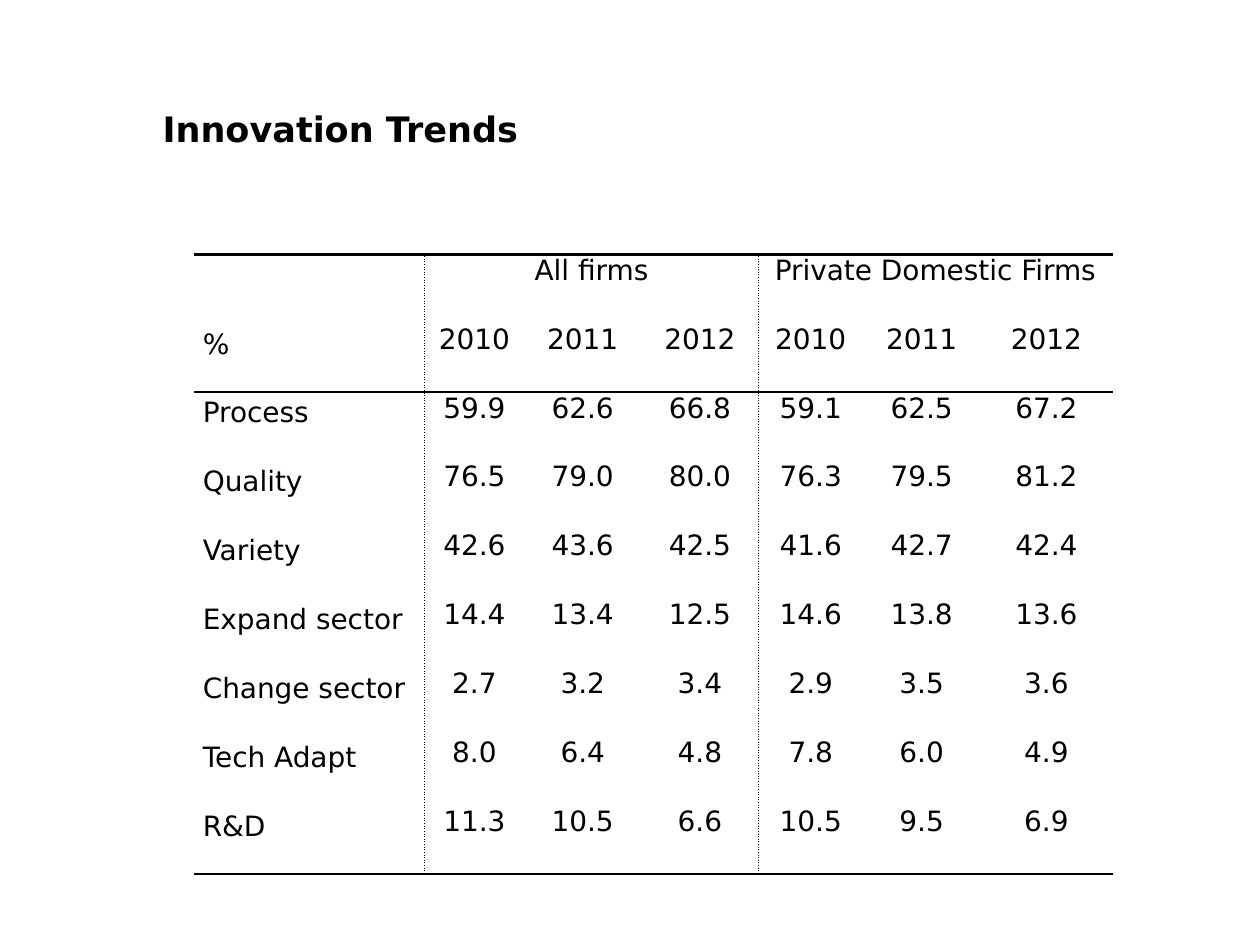
from lxml.etree import SubElement
from pptx import Presentation
from pptx.dml.color import RGBColor
from pptx.enum.text import MSO_ANCHOR, PP_ALIGN
from pptx.oxml.ns import qn
from pptx.util import Inches, Pt

COLORS = {"ink": "000000"}
FONT = "DejaVu Sans"
COLUMN_WIDTHS = [1.83, 0.79, 0.93, 0.93, 0.83, 0.93, 1.05]
GROUP_STARTS = (1, 4)
HEADER_ROW = 1
TREND_ROWS = [
    ["", "All firms", "", "", "Private Domestic Firms", "", ""],
    ["%", "2010", "2011", "2012", "2010", "2011", "2012"],
    ["Process", "59.9", "62.6", "66.8", "59.1", "62.5", "67.2"],
    ["Quality", "76.5", "79.0", "80.0", "76.3", "79.5", "81.2"],
    ["Variety", "42.6", "43.6", "42.5", "41.6", "42.7", "42.4"],
    ["Expand sector", "14.4", "13.4", "12.5", "14.6", "13.8", "13.6"],
    ["Change sector", "2.7", "3.2", "3.4", "2.9", "3.5", "3.6"],
    ["Tech Adapt", "8.0", "6.4", "4.8", "7.8", "6.0", "4.9"],
    ["R&D", "11.3", "10.5", "6.6", "10.5", "9.5", "6.9"],
]
LAST_ROW = len(TREND_ROWS) - 1


def style_font(font, size, bold=False):
    font.name = FONT
    font.size = Pt(size)
    font.bold = bold
    font.color.rgb = RGBColor.from_string(COLORS["ink"])


def add_title(slide, text):
    title = slide.shapes.add_textbox(Inches(1.29), Inches(0.67), Inches(6.29), Inches(0.7))
    frame = title.text_frame
    frame.word_wrap = True
    frame.vertical_anchor = MSO_ANCHOR.MIDDLE
    frame.margin_left = frame.margin_right = frame.margin_top = frame.margin_bottom = 0
    frame.text = text
    style_font(frame.paragraphs[0].runs[0].font, 20, bold=True)


def add_border(cell, side, width, dash="solid"):
    properties = cell._tc.get_or_add_tcPr()
    border = SubElement(properties, qn(f"a:ln{side}"), w=str(Pt(width)))
    if not width:
        SubElement(border, qn("a:noFill"))
        return
    fill = SubElement(border, qn("a:solidFill"))
    SubElement(fill, qn("a:srgbClr"), val=COLORS["ink"])
    SubElement(border, qn("a:prstDash"), val=dash)


def rule_cell(cell, row, column):
    last_column = column + (cell.span_width if cell.is_merge_origin else 1) - 1
    top = {0: 1.5, HEADER_ROW + 1: 1}.get(row, 0)
    bottom = {HEADER_ROW: 1, LAST_ROW: 1.5}.get(row, 0)
    add_border(cell, "L", int(column in GROUP_STARTS), "sysDot")
    add_border(cell, "R", int(last_column + 1 in GROUP_STARTS), "sysDot")
    add_border(cell, "T", top)
    add_border(cell, "B", bottom)
    cell.fill.background()


def write_cell(cell, text, column):
    cell.margin_left = cell.margin_right = Inches(0.07)
    cell.margin_top = cell.margin_bottom = 0
    if not text:
        return
    cell.text_frame.text = text
    paragraph = cell.text_frame.paragraphs[0]
    if column == 0:
        paragraph.line_spacing = 1.15
    else:
        paragraph.alignment = PP_ALIGN.CENTER
    style_font(paragraph.runs[0].font, 16)


def add_trend_table(slide):
    height = Inches(4.92)
    trends = slide.shapes.add_table(
        len(TREND_ROWS), len(COLUMN_WIDTHS),
        Inches(1.54), Inches(2.02), Inches(sum(COLUMN_WIDTHS)), height,
    ).table
    trends.first_row = False
    trends.horz_banding = False
    for column, width in zip(trends.columns, COLUMN_WIDTHS):
        column.width = Inches(width)
    for start in GROUP_STARTS:
        trends.cell(0, start).merge(trends.cell(0, start + 2))
    for row, texts in enumerate(TREND_ROWS):
        for column, text in enumerate(texts):
            cell = trends.cell(row, column)
            write_cell(cell, text, column)
            rule_cell(cell, row, column)


def main():
    presentation = Presentation()
    presentation.slide_width = Inches(10)
    presentation.slide_height = Inches(7.5)
    slide = presentation.slides.add_slide(presentation.slide_layouts[6])
    add_title(slide, "Innovation Trends")
    add_trend_table(slide)
    presentation.save("out.pptx")


if __name__ == "__main__":
    main()
